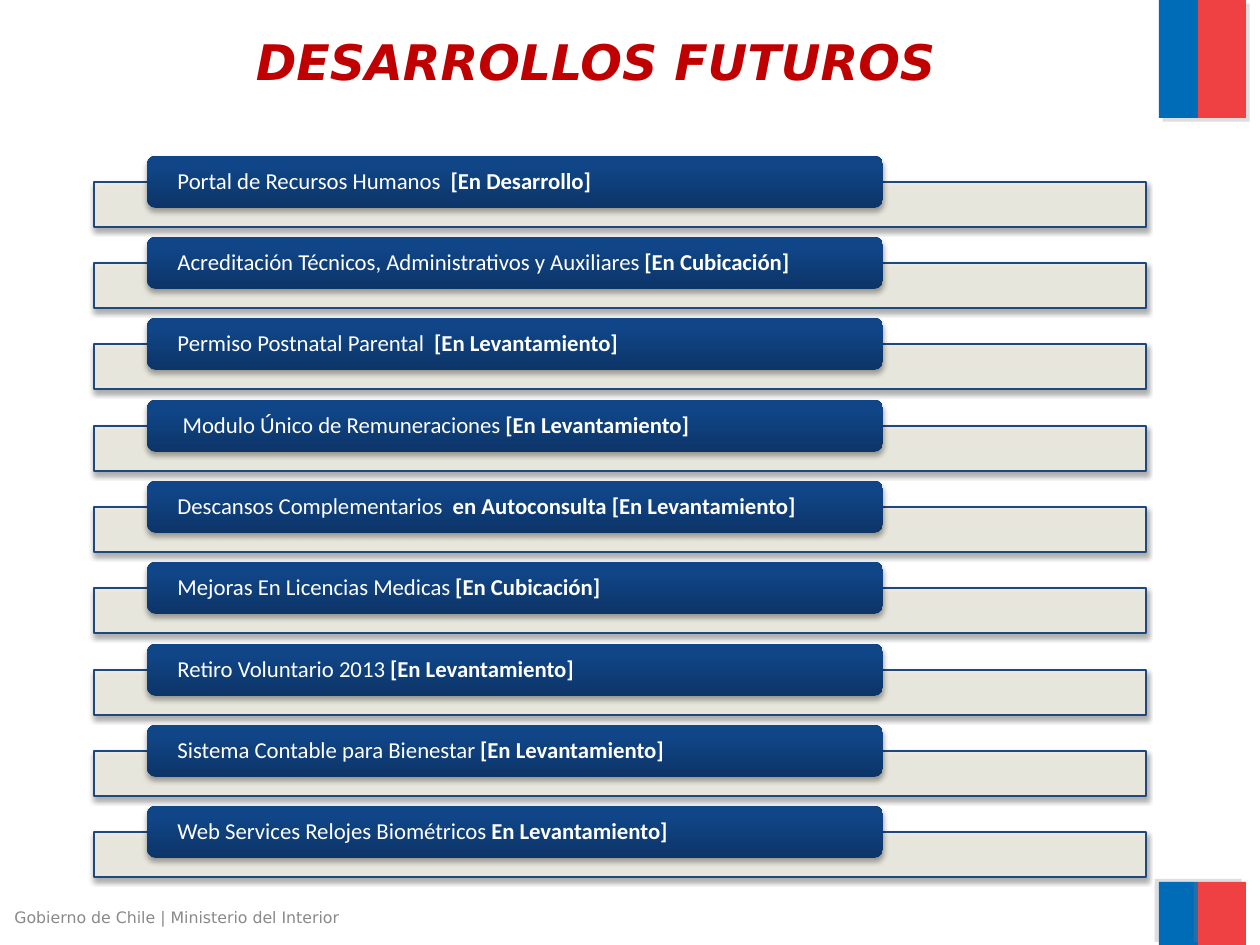
from lxml import etree
from pptx import Presentation, util as u
from pptx.dml.color import RGBColor
from pptx.enum import shapes, text
from pptx.oxml import ns

PX = 9144000 / 1260


class Theme:
    blue = "006CB7"
    red = "EF4144"
    title = "C00000"
    footer = "898989"
    white = "FFFFFF"
    rail = "EEECE1"
    rail_line = "1F497D"
    bar_bottom = "0D3568"
    bar_top = "104587"
    heading_font = "DejaVu Sans"
    body_font = "Calibri"
    title_size = 28
    body_size = 13
    footer_size = 9
    flag_shadow = "808080", 25, 0, 3
    bar_shadow = "000000", 35, 3.1, 1.8


def add_box(kind, left, top, width, height, fill, shadow, angle):
    shape = slide.shapes.add_shape(kind, *[round(v * PX) for v in (left, top, width, height)])
    shape.fill.solid()
    shape.fill.fore_color.rgb = RGBColor.from_string(fill)
    shape.line.fill.background()
    shape.shadow.inherit = False
    color, opacity, blur, distance = shadow
    effects = shape._element.spPr.find(ns.qn("a:effectLst"))
    outer = etree.SubElement(effects, ns.qn("a:outerShdw"), blurRad=str(u.Pt(blur)),
                             dist=str(u.Pt(distance)), dir=str(angle * 60000),
                             algn="ctr", rotWithShape="0")
    tint = etree.SubElement(outer, ns.qn("a:srgbClr"), val=color)
    etree.SubElement(tint, ns.qn("a:alpha"), val=str(opacity * 1000))
    return shape


def format_run(run, font, size, color, bold=False, italic=False):
    run.font.name = font
    run.font.size = u.Pt(size)
    run.font.color.rgb = RGBColor.from_string(color)
    run.font.bold = bold
    run.font.italic = italic


presentation = Presentation()
presentation.slide_width = round(1260 * PX)
presentation.slide_height = round(945 * PX)
slide = presentation.slides.add_slide(presentation.slide_layouts[6])

for top, height, angle in [(0, 118, 45), (882, 63, 215)]:
    for left, width, color in [(1159, 39, Theme.blue), (1198, 48, Theme.red)]:
        add_box(shapes.MSO_SHAPE.RECTANGLE, left, top, width, height, color,
                Theme.flag_shadow, angle)

footer = slide.shapes.add_textbox(*[round(v * PX) for v in (2, 900, 400, 34)])
footer.text_frame.word_wrap = True
footer.text_frame.vertical_anchor = text.MSO_ANCHOR.MIDDLE
footer.text_frame.text = "Gobierno de Chile | Ministerio del Interior"
format_run(footer.text_frame.paragraphs[0].runs[0], Theme.heading_font,
           Theme.footer_size, Theme.footer)

title = slide.shapes.add_textbox(*[round(v * PX) for v in (21, 21, 1125, 158)])
title.text_frame.word_wrap = True
title.text_frame.margin_left = round(24 * PX)
title.text_frame.margin_right = 0
title.text_frame.margin_top = round(10 * PX)
title.text_frame.text = "DESARROLLOS FUTUROS"
title.text_frame.paragraphs[0].alignment = text.PP_ALIGN.CENTER
format_run(title.text_frame.paragraphs[0].runs[0], Theme.heading_font,
           Theme.title_size, Theme.title, bold=True, italic=True)

projects = [
    ("Portal de Recursos Humanos  ", "[En Desarrollo]"),
    ("Acreditación Técnicos, Administrativos y Auxiliares ", "[En Cubicación]"),
    ("Permiso Postnatal Parental  ", "[En Levantamiento]"),
    (" Modulo Único de Remuneraciones", " [En Levantamiento]"),
    ("Descansos Complementarios", "  en Autoconsulta [En Levantamiento]"),
    ("Mejoras En Licencias Medicas ", "[En Cubicación]"),
    ("Retiro Voluntario 2013 ", "[En Levantamiento]"),
    ("Sistema Contable para Bienestar ", "[En Levantamiento]"),
    ("Web Services Relojes Biométricos ", "En Levantamiento]"),
]
first_top, last_top = 156, 806
for index, (project, status) in enumerate(projects):
    top = round(first_top + index * (last_top - first_top) / (len(projects) - 1))

    rail = add_box(shapes.MSO_SHAPE.RECTANGLE, 94, top + 26, 1052, 45, Theme.rail,
                   Theme.bar_shadow, 90)
    rail.line.color.rgb = RGBColor.from_string(Theme.rail_line)
    rail.line.width = u.Pt(0.75)
    rail_color = rail._element.spPr.find(ns.qn("a:solidFill"))[0]
    etree.SubElement(rail_color, ns.qn("a:alpha"), val="90000")

    bar = add_box(shapes.MSO_SHAPE.ROUNDED_RECTANGLE, 147, top, 736, 52, Theme.bar_top,
                  Theme.bar_shadow, 90)
    bar.fill.gradient()
    bar.fill.gradient_angle = 90
    stops = zip(bar.fill.gradient_stops, (0, 0.8), (Theme.bar_bottom, Theme.bar_top))
    for stop, position, color in stops:
        stop.position = position
        stop.color.rgb = RGBColor.from_string(color)

    frame = bar.text_frame
    frame.word_wrap = True
    frame.vertical_anchor = text.MSO_ANCHOR.MIDDLE
    frame.margin_left = frame.margin_right = round(28 * PX)
    frame.margin_top = frame.margin_bottom = 0
    paragraph = frame.paragraphs[0]
    paragraph.alignment = text.PP_ALIGN.LEFT
    paragraph.line_spacing = 0.9
    for words, bold in [(project, False), (status, True)]:
        run = paragraph.add_run()
        run.text = words
        format_run(run, Theme.body_font, Theme.body_size, Theme.white, bold=bold)

presentation.save("out.pptx")
